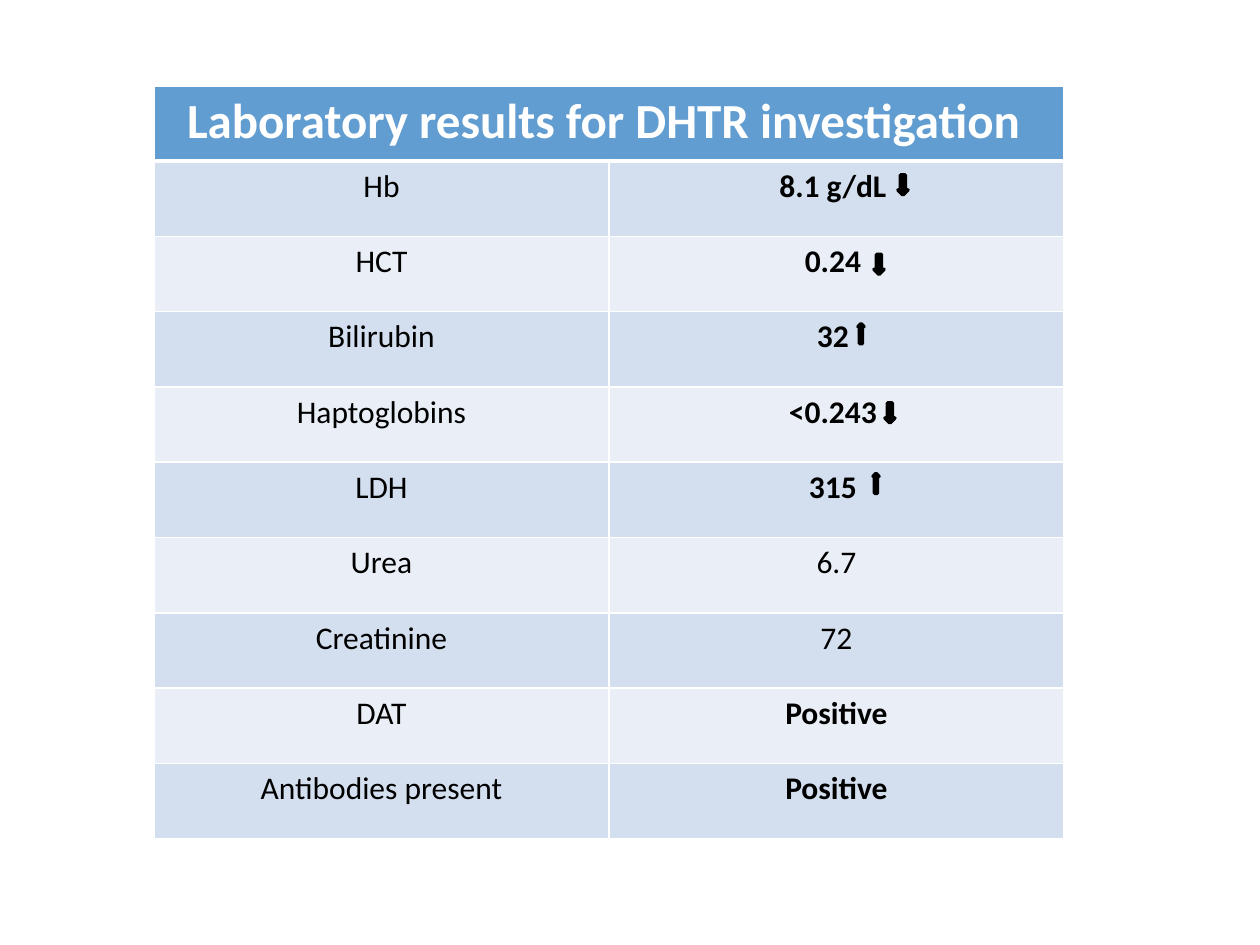
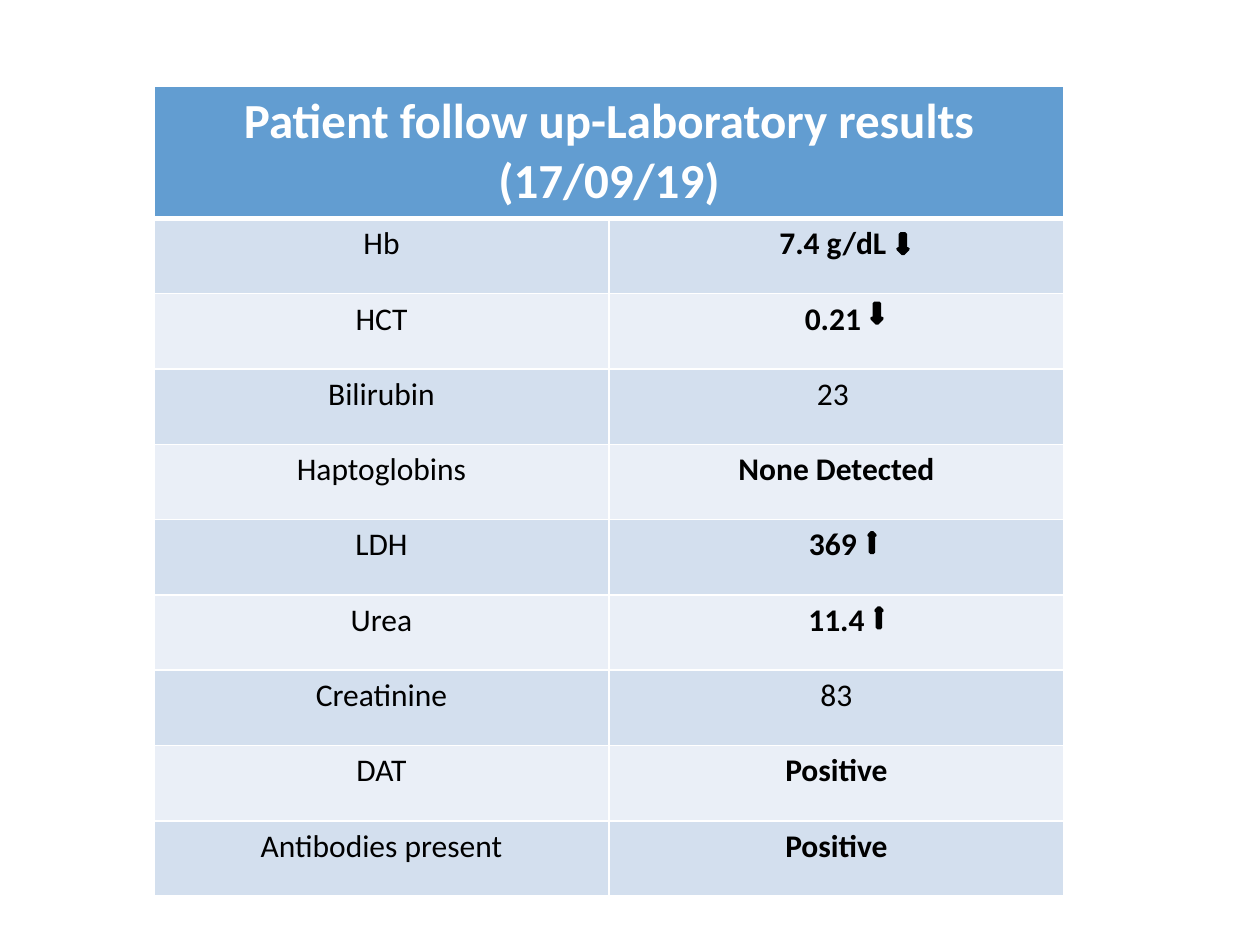
import pptx
import pptx.dml.color
import pptx.enum.shapes
import pptx.enum.text
import pptx.oxml
import pptx.oxml.ns
import pptx.util

PX = 914400 / 126
FONT = "Calibri"
COLORS = {
    "header": "629DD1",
    "band_dark": "D3DFEE",
    "band_light": "EAEFF7",
    "white": "FFFFFF",
    "black": "000000",
}
TABLE_LEFT, TABLE_TOP, TABLE_WIDTH = 154, 86, 910
BODY_HEIGHT = 678
ARROW_HEIGHT = 20
ARROWS = {  # direction: preset shape and width
    "up": (pptx.enum.shapes.MSO_SHAPE.UP_ARROW, 6),
    "down": (pptx.enum.shapes.MSO_SHAPE.DOWN_ARROW, 10),
}

# Each row: test, value, bold, arrow (direction, x and y inside the value cell)
INVESTIGATION = [
    ("Hb", "8.1 g/dL ", True, ("down", 289, 14)),
    ("HCT", "0.24 ", True, ("down", 265, 18)),
    ("Bilirubin", "32 ", True, ("up", 249, 12)),
    ("Haptoglobins", "<0.243 ", True, ("down", 276, 16)),
    ("LDH", "315 ", True, ("up", 264, 11)),
    ("Urea", "6.7", False, None),
    ("Creatinine", "72", False, None),
    ("DAT", "Positive", True, None),
    ("Antibodies present", "Positive", True, None),
]
FOLLOW_UP = [
    ("Hb", "7.4 g/dL ", True, ("down", 289, 16)),
    ("HCT", "0.21 ", True, ("down", 263, 10)),
    ("Bilirubin", "23 ", False, None),
    ("Haptoglobins", "None Detected", True, None),
    ("LDH", "369 ", True, ("up", 260, 13)),
    ("Urea", "11.4", True, ("up", 267, 13)),
    ("Creatinine", "83", False, None),
    ("DAT", "Positive", True, None),
    ("Antibodies present", "Positive", True, None),
]


def px(length):
    return pptx.util.Emu(round(length * PX))


def rgb(name):
    return pptx.dml.color.RGBColor.from_string(COLORS[name])


def add_borders(cell, top=1, bottom=1):
    """Draw white cell borders; widths are in points."""
    properties = cell._tc.get_or_add_tcPr()
    for side, width in (("L", 1), ("R", 1), ("T", top), ("B", bottom)):
        properties.append(pptx.oxml.parse_xml(
            f'<a:ln{side} {pptx.oxml.ns.nsdecls("a")} w="{pptx.util.Pt(width)}">'
            f'<a:solidFill><a:srgbClr val="{COLORS["white"]}"/></a:solidFill>'
            f'</a:ln{side}>'))


def fill_cell(cell, fill, text="", size=18, color="black", bold=False, top=1, bottom=1):
    add_borders(cell, top, bottom)
    cell.fill.solid()
    cell.fill.fore_color.rgb = rgb(fill)
    if text:
        para = cell.text_frame.paragraphs[0]
        para.alignment = pptx.enum.text.PP_ALIGN.CENTER
        span = para.add_run()
        span.text = text
        span.font.name = FONT
        span.font.size = pptx.util.Pt(size)
        span.font.bold = bold
        span.font.color.rgb = rgb(color)


def add_arrow(page, direction, left, top):
    preset, width = ARROWS[direction]
    arrow = page.shapes.add_shape(preset, px(left), px(top), px(width), px(ARROW_HEIGHT))
    arrow.shadow.inherit = False
    arrow.fill.solid()
    arrow.fill.fore_color.rgb = rgb("black")
    arrow.line.color.rgb = rgb("black")
    arrow.line.width = pptx.util.Pt(2)


def add_results(page, box, title, header_height, results):
    left, top, width, height = box
    row_height = (height - header_height) / len(results)
    table = page.shapes.add_table(
        len(results) + 1, 2, px(left), px(top), px(width), px(height)).table
    for column in table.columns:
        column.width = px(width / 2)

    # Header across both columns
    table.rows[0].height = px(header_height)
    table.cell(0, 0).merge(table.cell(0, 1))
    fill_cell(table.cell(0, 0), "header", title, 28, "white", True, bottom=3)
    fill_cell(table.cell(0, 1), "header", bottom=3)

    # Banded result rows, with arrows beside abnormal values
    for index, (test, value, bold, arrow) in enumerate(results):
        row = index + 1
        table.rows[row].height = px(row_height)
        band = "band_light" if index % 2 else "band_dark"
        rule = 1 if index else 3
        fill_cell(table.cell(row, 0), band, test, top=rule)
        fill_cell(table.cell(row, 1), band, value, bold=bold, top=rule)
        if arrow:
            direction, x, y = arrow
            add_arrow(page, direction, left + width / 2 + x,
                      top + header_height + index * row_height + y)


def add_results_page(deck, title, header_height, results):
    page = deck.slides.add_slide(deck.slide_layouts[6])
    box = (TABLE_LEFT, TABLE_TOP, TABLE_WIDTH, header_height + BODY_HEIGHT)
    add_results(page, box, title, header_height, results)


def main():
    deck = pptx.Presentation()
    deck.slide_width, deck.slide_height = px(1260), px(945)
    add_results_page(deck, "Laboratory results for DHTR investigation ", 75, INVESTIGATION)
    add_results_page(deck, "Patient follow up-Laboratory results (17/09/19)", 132, FOLLOW_UP)
    deck.save("out.pptx")


if __name__ == "__main__":
    main()
